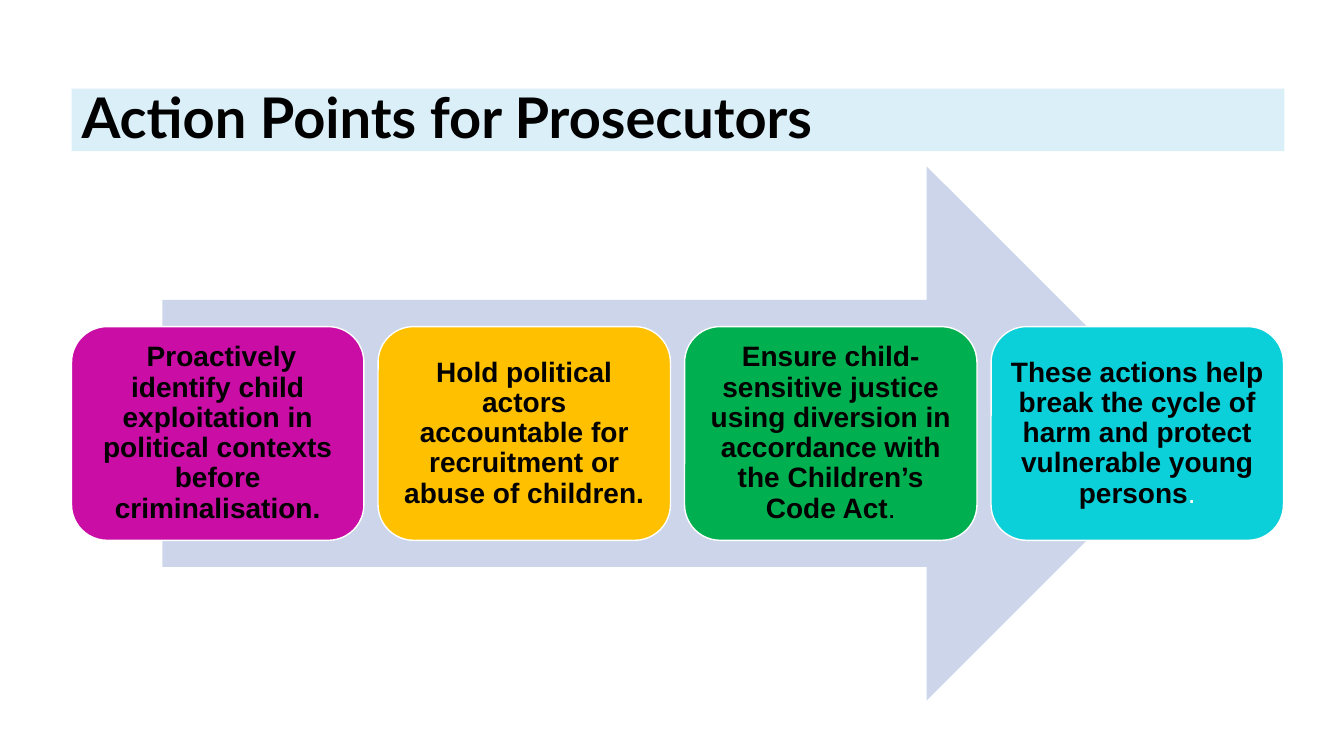
from pptx import Presentation
from pptx.dml.color import RGBColor
from pptx.enum.shapes import MSO_SHAPE
from pptx.enum.text import MSO_ANCHOR, MSO_AUTO_SIZE, PP_ALIGN
from pptx.util import Inches, Pt


def paint(part, color):
    """Give a fill or a line's fill one solid colour."""
    part.solid()
    part.fore_color.rgb = RGBColor.from_string(color)


class Deck:
    ink = "000000"
    white = "FFFFFF"
    head = "Lato"
    body = "Arial"

    def __init__(self, slide):
        self.slide = slide

    def style(self, para, name, size, align):
        para.font.name, para.font.size, para.font.bold = name, Pt(size), True
        paint(para.font.fill, self.ink)
        para.alignment, para.line_spacing = align, 0.9

    def title(self, text, x, y, w, h, fill):
        bar = self.slide.shapes.title
        bar.left, bar.top, bar.width, bar.height = map(Inches, (x, y, w, h))
        paint(bar.fill, fill)
        frame = bar.text_frame
        frame.text = text
        frame.auto_size = MSO_AUTO_SIZE.NONE
        frame.vertical_anchor = MSO_ANCHOR.MIDDLE
        self.style(frame.paragraphs[0], self.head, 40, PP_ALIGN.LEFT)

    def shape(self, kind, x, y, w, h, fill):
        item = self.slide.shapes.add_shape(kind, *map(Inches, (x, y, w, h)))
        item.shadow.inherit = False
        paint(item.fill, fill)
        item.line.fill.background()
        return item

    def card(self, text, stop, tint, x, y, w, h, fill):
        """Add a rounded box; stop is a light full stop in colour tint."""
        box = self.shape(MSO_SHAPE.ROUNDED_RECTANGLE, x, y, w, h, fill)
        paint(box.line.fill, self.white)
        box.line.width = Pt(1)
        frame = box.text_frame
        frame.word_wrap = True
        frame.vertical_anchor = MSO_ANCHOR.MIDDLE
        frame.margin_left = frame.margin_right = Inches(0.08)
        frame.margin_top = frame.margin_bottom = Inches(0.08)
        para = frame.paragraphs[0]
        runs = [para.add_run()]
        runs[0].text = text
        if stop:
            runs.append(para.add_run())
            runs[1].text = stop
            runs[1].font.bold = False
        self.style(para, self.body, 20, PP_ALIGN.CENTER)
        for run, color in zip(runs, (self.ink, tint)):
            paint(run.font.fill, color)


CARDS = [
    (" Proactively identify child exploitation in political contexts "
     "before criminalisation.", "", Deck.ink, "C90DA5"),
    ("Hold political actors accountable for recruitment or abuse of "
     "children.", "", Deck.ink, "FFC000"),
    ("Ensure child-sensitive justice using diversion in accordance with "
     "the Children’s Code Act", ".", Deck.ink, "00B050"),
    ("These actions help break the cycle of harm and protect vulnerable "
     "young persons", ".", Deck.white, "0BD0D9"),
]


def main():
    show = Presentation()
    show.slide_width, show.slide_height = Inches(13.33), Inches(7.5)
    deck = Deck(show.slides.add_slide(show.slide_layouts[5]))
    left, wide, step = 0.71, 2.9, 3.04
    deck.title("Action Points for Prosecutors", left, 0.88, 12.03, 0.62,
               "DBEFF9")
    deck.shape(MSO_SHAPE.RIGHT_ARROW, 1.61, 1.65, 10.23, 5.3, "CCD5EA")
    for i, (text, stop, tint, fill) in enumerate(CARDS):
        deck.card(text, stop, tint, left + i * step, 3.24, wide, 2.12, fill)
    show.save("out.pptx")


if __name__ == "__main__":
    main()
